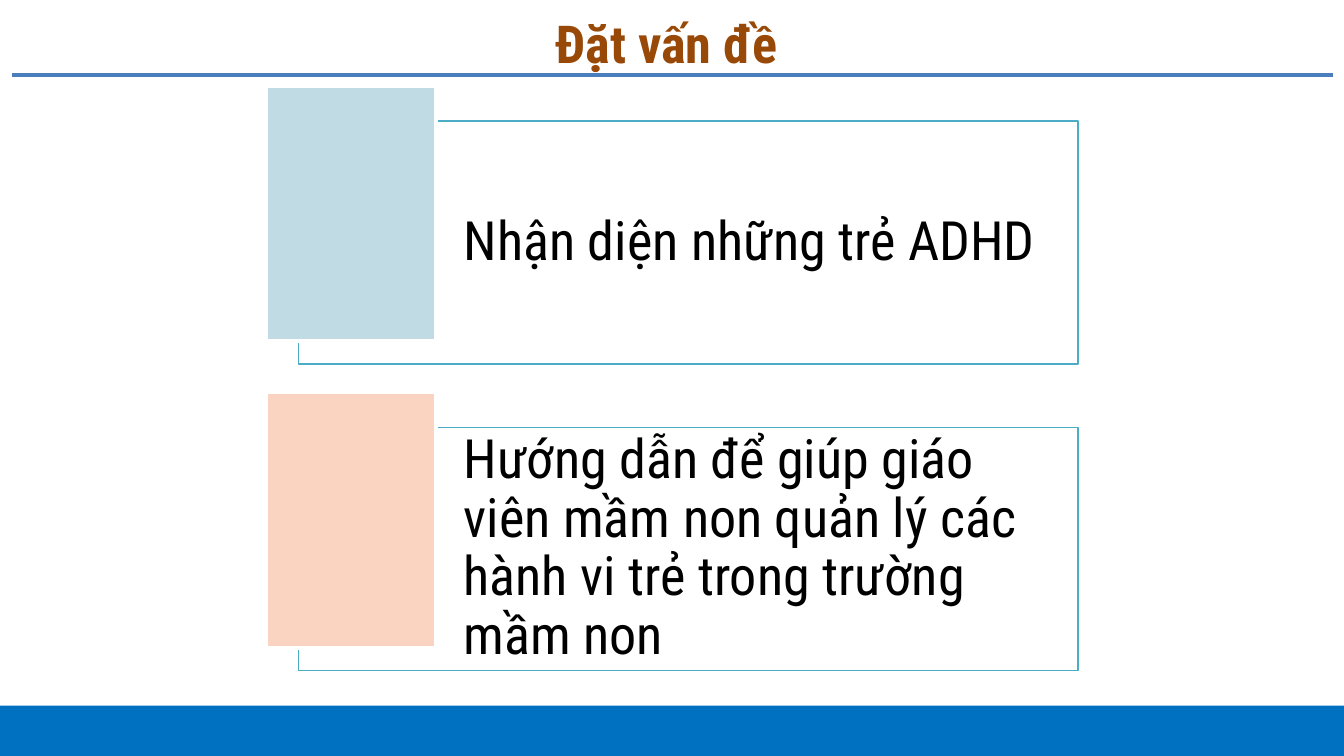
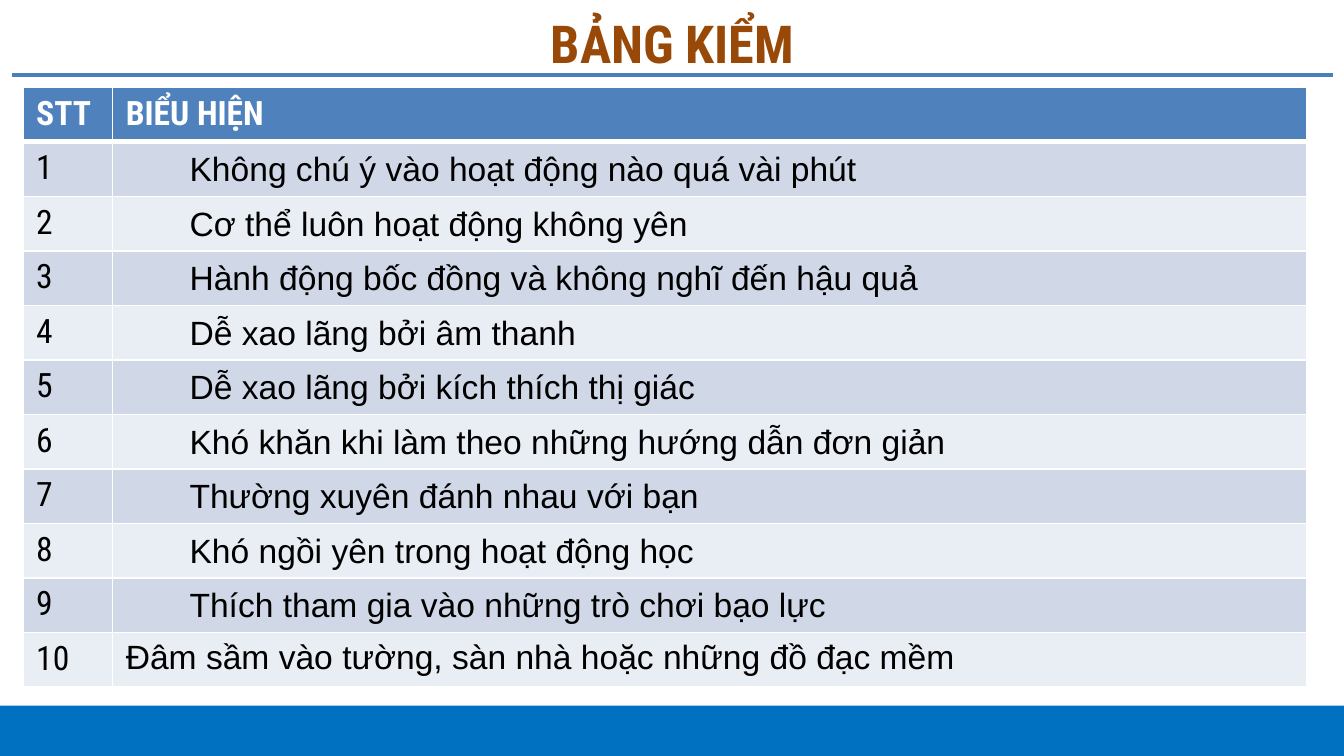
from lxml.etree import SubElement
from pptx import Presentation
from pptx.dml.color import RGBColor
from pptx.enum.shapes import MSO_CONNECTOR, MSO_SHAPE
from pptx.enum.text import MSO_ANCHOR, MSO_AUTO_SIZE, PP_ALIGN
from pptx.oxml.ns import qn
from pptx.util import Pt

HEADING_FONT = "Roboto Condensed"
BODY_FONT = "Arial"
WHITE, BLACK = "FFFFFF", "000000"
TITLE_BROWN, RULE_BLUE, FOOTER_BLUE = "984807", "4B7EBC", "0070C0"
CARD_TEAL, HEADER_BLUE = "4BACC6", "4F81BD"
ROW_FILLS = ("D0D8E8", "E9EDF4")

GOALS = [
    ("Nhận diện những trẻ ADHD", "C1DBE5"),
    ("Hướng dẫn để giúp giáo viên mầm non quản lý các hành vi trẻ "
     "trong trường mầm non", "FBD3C1"),
]
SIGNS = [
    "Không chú ý vào hoạt động nào quá vài phút",
    "Cơ thể luôn hoạt động không yên",
    "Hành động bốc đồng và không nghĩ đến hậu quả",
    "Dễ xao lãng bởi âm thanh",
    "Dễ xao lãng bởi kích thích thị giác",
    "Khó khăn khi làm theo những hướng dẫn đơn giản",
    "Thường xuyên đánh nhau với bạn",
    "Khó ngồi yên trong hoạt động học",
    "Thích tham gia vào những trò chơi bạo lực",
    "Đâm sầm vào tường, sàn nhà hoặc những đồ đạc mềm",
]


def color(hex_value):
    """Turn a hex string into a colour."""
    return RGBColor.from_string(hex_value)


def add_run(paragraph, text, size, hex_value, font=HEADING_FONT, bold=False):
    """Add one formatted run to a paragraph."""
    run = paragraph.add_run()
    run.text = text
    run.font.name = font
    run.font.size = Pt(size)
    run.font.bold = bold
    run.font.color.rgb = color(hex_value)


def add_box(slide, box, fill, line=None, line_width=1):
    """Add a flat rectangle, outlined if a line colour is given."""
    shape = slide.shapes.add_shape(MSO_SHAPE.RECTANGLE, *map(Pt, box))
    shape.shadow.inherit = False
    shape.fill.solid()
    shape.fill.fore_color.rgb = color(fill)
    if line:
        shape.line.color.rgb = color(line)
        shape.line.width = Pt(line_width)
    else:
        shape.line.fill.background()
    return shape


def add_framed_slide(presentation, title):
    """Add a slide with the shared title, rule and footer band."""
    slide = presentation.slides.add_slide(presentation.slide_layouts[5])
    add_box(slide, (-2.9, 378, 725.8, 27), FOOTER_BLUE)
    rule = slide.shapes.add_connector(
        MSO_CONNECTOR.STRAIGHT, Pt(6.6), Pt(40.2), Pt(714), Pt(40.2))
    rule.line.color.rgb = color(RULE_BLUE)
    rule.line.width = Pt(2)
    SubElement(rule._element.spPr, qn("a:effectLst"))
    heading = slide.shapes.title
    heading.left, heading.top, heading.width, heading.height = map(
        Pt, (12.2, 4.3, 696.2, 36.7))
    frame = heading.text_frame
    frame.auto_size = MSO_AUTO_SIZE.NONE
    frame.vertical_anchor = MSO_ANCHOR.MIDDLE
    paragraph = frame.paragraphs[0]
    paragraph.alignment = PP_ALIGN.CENTER
    add_run(paragraph, title, 28, TITLE_BROWN, bold=True)
    return slide


def add_goal_card(slide, box, text, accent):
    """Fill a box with an outlined text card and an accent block at its corner."""
    left, top, width, height = box
    offset_x, offset_y = 17.4, 18.7
    card = add_box(
        slide, (left + offset_x, top + offset_y, width - offset_x, height - offset_y),
        WHITE, CARD_TEAL, 0.75)
    fill_color = card._element.spPr.find(qn("a:solidFill"))[0]
    SubElement(fill_color, qn("a:alpha"), val="40000")
    frame = card.text_frame
    frame.word_wrap = True
    frame.vertical_anchor = MSO_ANCHOR.MIDDLE
    frame.margin_left = Pt(88.4)
    frame.margin_top = frame.margin_right = frame.margin_bottom = Pt(8.7)
    paragraph = frame.paragraphs[0]
    paragraph.alignment = PP_ALIGN.LEFT
    paragraph.line_spacing = 0.9
    add_run(paragraph, text, 29, BLACK)
    add_box(slide, (left, top, 91.2, 136.8), accent, WHITE, 2)


def set_borders(cell, bottom_width):
    """Draw white borders round a cell."""
    properties = cell._tc.get_or_add_tcPr()
    widths = {"a:lnL": 1, "a:lnR": 1, "a:lnT": 1, "a:lnB": bottom_width}
    for position, (tag, width) in enumerate(widths.items()):
        line = properties.makeelement(qn(tag), {"w": str(Pt(width))})
        fill = SubElement(line, qn("a:solidFill"))
        SubElement(fill, qn("a:srgbClr"), val=WHITE)
        properties.insert(position, line)


def fill_cell(cell, text, fill, hex_value=BLACK, font=HEADING_FONT, bold=False,
              bottom_width=1):
    """Write and format one table cell, returning its paragraph."""
    cell.fill.solid()
    cell.fill.fore_color.rgb = color(fill)
    set_borders(cell, bottom_width)
    paragraph = cell.text_frame.paragraphs[0]
    add_run(paragraph, text, 18, hex_value, font, bold)
    return paragraph


def indent_sign(cell, paragraph):
    """Give a sign its indent, spacing and tight cell margins."""
    cell.margin_left = cell.margin_right = Pt(5.4)
    cell.margin_top = cell.margin_bottom = Pt(0)
    paragraph.alignment = PP_ALIGN.JUSTIFY
    paragraph.line_spacing = 1.25
    paragraph.space_after = Pt(10)
    properties = paragraph._p.get_or_add_pPr()
    properties.set("marL", str(Pt(36)))
    properties.set("indent", "0")


def add_checklist(slide, box):
    """Add the numbered table of signs in a box."""
    left, top, width, height = box
    row_count = len(SIGNS) + 1
    table = slide.shapes.add_table(row_count, 2, *map(Pt, box)).table
    number_width = 48
    table.columns[0].width = Pt(number_width)
    table.columns[1].width = Pt(width - number_width)
    for row in table.rows:
        row.height = Pt(height / row_count)
    for column, heading in enumerate(("STT", "BIỂU HIỆN")):
        fill_cell(table.cell(0, column), heading, HEADER_BLUE, WHITE,
                  bold=True, bottom_width=3)
    for number, sign in enumerate(SIGNS, start=1):
        fill = ROW_FILLS[(number - 1) % 2]
        fill_cell(table.cell(number, 0), str(number), fill)
        sign_cell = table.cell(number, 1)
        paragraph = fill_cell(sign_cell, sign, fill, font=BODY_FONT)
        if number < len(SIGNS):
            indent_sign(sign_cell, paragraph)


def build_goals_slide(presentation):
    """Build the slide that states the two goals."""
    slide = add_framed_slide(presentation, "Đặt vấn đề ")
    for index, (text, accent) in enumerate(GOALS):
        add_goal_card(slide, (142.6, 46.1 + index * 164.2, 435, 149), text, accent)


def build_checklist_slide(presentation):
    """Build the slide with the checklist."""
    slide = add_framed_slide(presentation, "BẢNG KIỂM")
    add_checklist(slide, (12.2, 46.8, 688.1, 321.2))


def main():
    """Build and save the presentation."""
    presentation = Presentation()
    presentation.slide_width, presentation.slide_height = Pt(720), Pt(405)
    build_goals_slide(presentation)
    build_checklist_slide(presentation)
    presentation.save("out.pptx")


if __name__ == "__main__":
    main()
